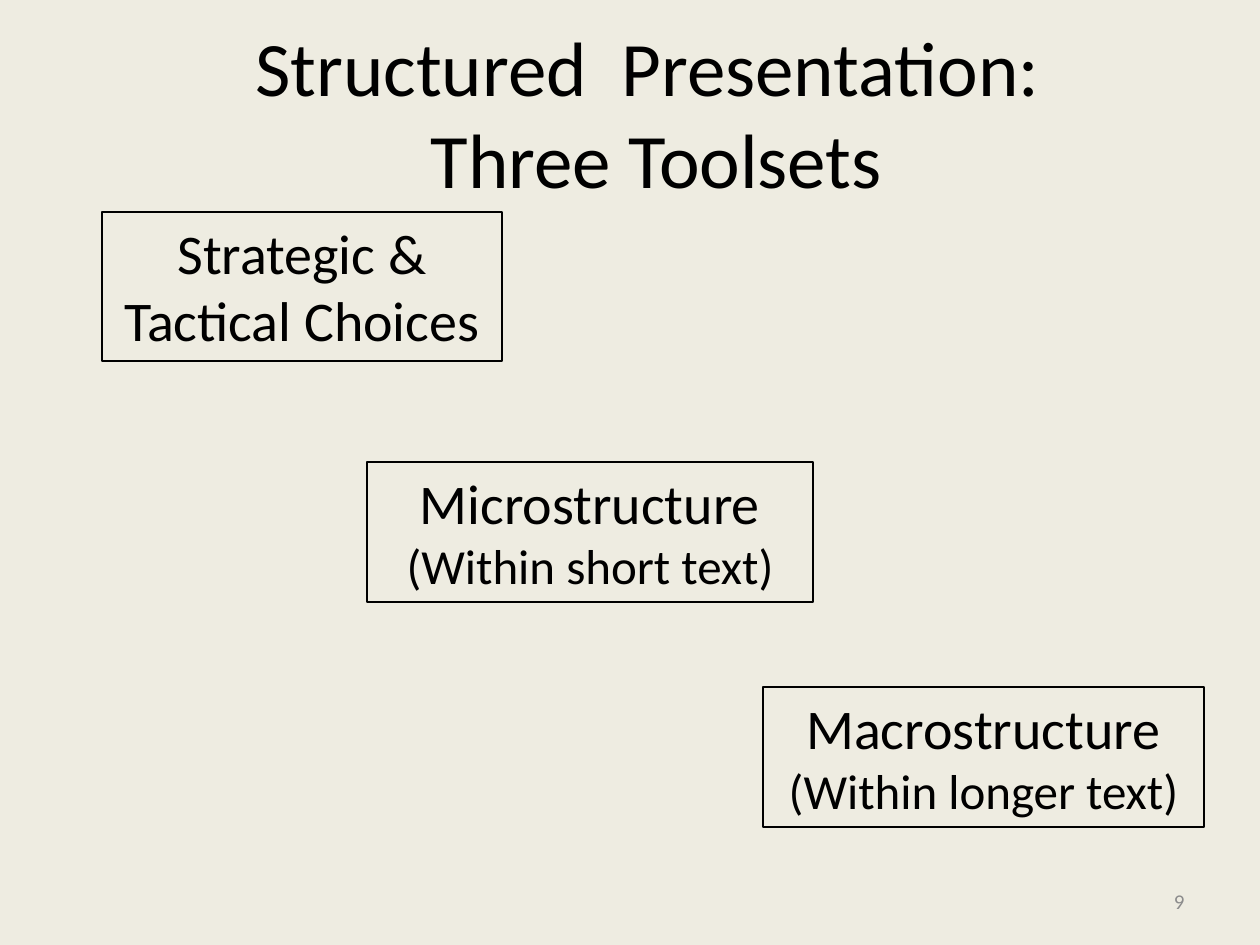
from pptx import Presentation
from pptx.dml.color import RGBColor
from pptx.enum.text import MSO_ANCHOR, MSO_AUTO_SIZE, PP_ALIGN
from pptx.util import Emu, Pt

SCALE = 914400 / 126
FONT = "Calibri"
COLORS = {"back": "EEECE1", "ink": "000000", "number": "8C8C8C"}


def px(n):
    return Emu(round(n * SCALE))


def color(name):
    return RGBColor.from_string(COLORS[name])


def add_run(para, text, size, ink="ink"):
    run = para.add_run()
    run.text = text
    run.font.name = FONT
    run.font.size = Pt(size)
    run.font.color.rgb = color(ink)


def add_box(slide, place, anchor=MSO_ANCHOR.MIDDLE):
    box = slide.shapes.add_textbox(*map(px, place))
    frame = box.text_frame
    frame.word_wrap = True
    frame.vertical_anchor = anchor
    return box


def add_title(slide, place, lines):
    para = add_box(slide, place).text_frame.paragraphs[0]
    para.alignment = PP_ALIGN.CENTER
    for i, line in enumerate(lines):
        if i:
            para.add_line_break()
        add_run(para, line, 44)


def add_tool(slide, place, lines):
    box = add_box(slide, place, MSO_ANCHOR.TOP)
    box.line.color.rgb = color("ink")
    box.line.width = Pt(0.75)
    frame = box.text_frame
    frame.auto_size = MSO_AUTO_SIZE.SHAPE_TO_FIT_TEXT
    for i, (line, size) in enumerate(zip(lines, (32, 28))):
        para = frame.add_paragraph() if i else frame.paragraphs[0]
        para.alignment = PP_ALIGN.CENTER
        add_run(para, line, size)


def add_number(slide, place, text):
    para = add_box(slide, place).text_frame.paragraphs[0]
    para.alignment = PP_ALIGN.RIGHT
    add_run(para, text, 12, "number")


def main():
    deck = Presentation()
    deck.slide_width, deck.slide_height = px(1260), px(945)
    slide = deck.slides.add_slide(deck.slide_layouts[6])
    fill = slide.background.fill
    fill.solid()
    fill.fore_color.rgb = color("back")

    add_title(slide, (63, 38, 1187, 147),
              ["Structured  Presentation: ", "Three Toolsets"])
    tools = [
        ((102, 212, 400, 149), ["Strategic & Tactical Choices"]),
        ((367, 462, 446, 140), ["Microstructure", "(Within short text)"]),
        ((763, 687, 441, 140), ["Macrostructure", "(Within longer text)"]),
    ]
    for place, lines in tools:
        add_tool(slide, place, lines)
    add_number(slide, (903, 876, 294, 50), "9")
    deck.save("out.pptx")


if __name__ == "__main__":
    main()
